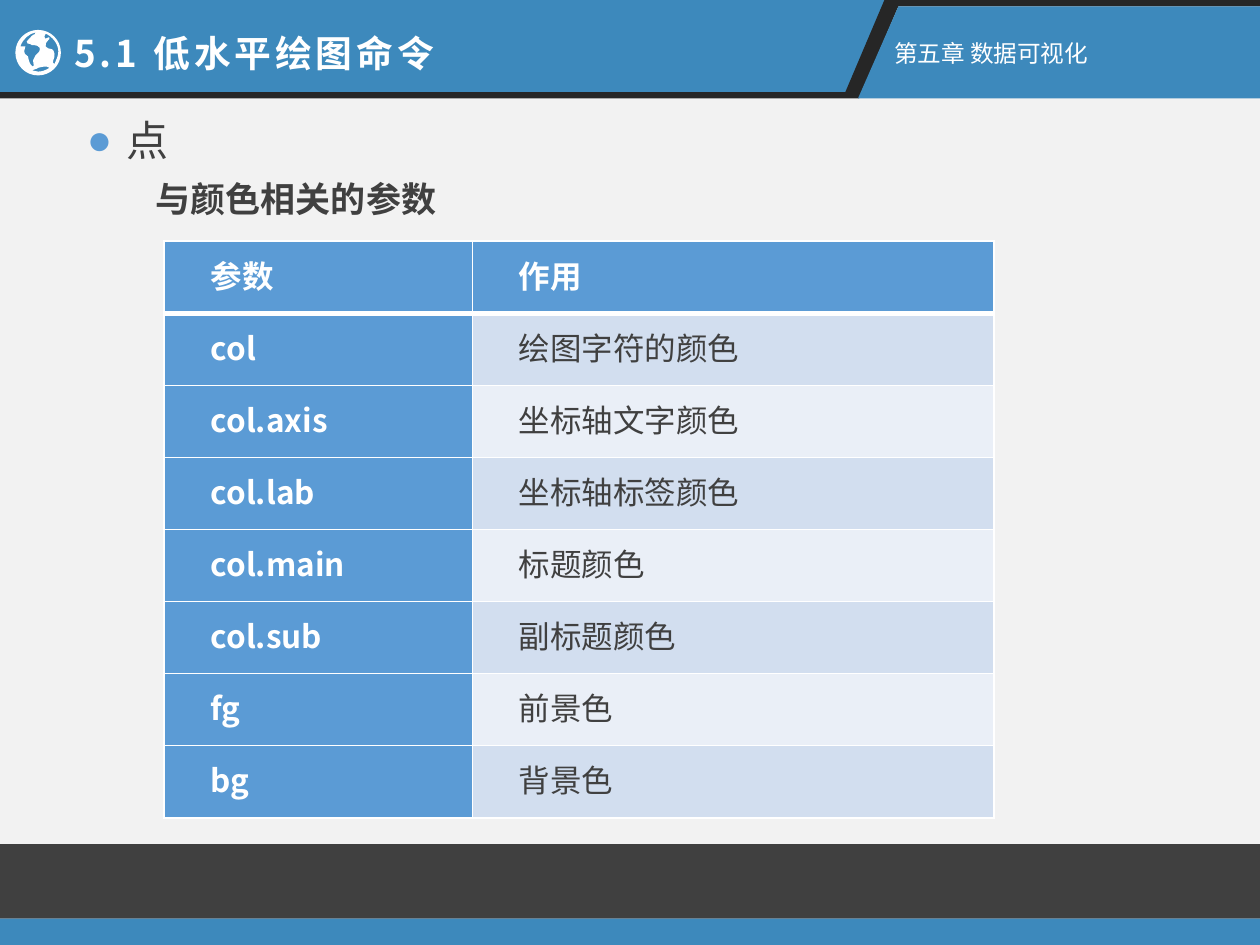
from lxml import etree
from pptx import Presentation
from pptx.dml.color import RGBColor
from pptx.enum.shapes import MSO_SHAPE
from pptx.enum.text import MSO_ANCHOR, MSO_AUTO_SIZE, PP_ALIGN
from pptx.oxml.ns import qn
from pptx.util import Pt

RECT = MSO_SHAPE.RECTANGLE
TOP, MIDDLE = MSO_ANCHOR.TOP, MSO_ANCHOR.MIDDLE
NO_FIT = MSO_AUTO_SIZE.NONE
LEFT, JUSTIFY = PP_ALIGN.LEFT, PP_ALIGN.JUSTIFY
FACE = "Noto Sans CJK SC"
WIDE, HIGH = 720, 540
COLORS = {
    "page": "F2F2F2", "dark": "404040", "black": "262626", "blue": "3D89BC",
    "head": "5B9BD5", "odd": "D2DEEF", "even": "EAEFF7", "white": "FFFFFF",
}
ROWS = [
    ("参数", "作用"),
    ("col", "绘图字符的颜色"),
    ("col.axis", "坐标轴文字颜色"),
    ("col.lab", "坐标轴标签颜色"),
    ("col.main", "标题颜色"),
    ("col.sub", "副标题颜色"),
    ("fg", "前景色"),
    ("bg", "背景色"),
]
GLOBE = [
    [(18, 0), (8, 0), (0, 8), (0, 18), (0, 28), (8, 36), (18, 36),
     (28, 36), (36, 28), (36, 18), (36, 8), (28, 0), (18, 0)],
    [(34, 17), (34, 21), (32, 24), (31, 27), (30, 27), (29, 25), (30, 24),
     (31, 23), (31, 20), (31, 19), (31, 18), (30, 15), (28, 15),
     (27, 15), (26, 15), (24, 13), (23, 9), (28, 8), (27, 6),
     (26, 5), (23, 9), (23, 5), (23, 4), (23, 4), (24, 3),
     (29, 5), (34, 11), (34, 17)],
    [(16, 2), (16, 3), (15, 4), (14, 4), (13, 5), (12, 5), (12, 6),
     (11, 7), (9, 9), (9, 9), (9, 10), (10, 12), (11, 11),
     (11, 11), (12, 11), (13, 12), (15, 12), (21, 12), (19, 17),
     (18, 19), (16, 19), (15, 22), (15, 22), (14, 24), (14, 24),
     (14, 25), (15, 29), (14, 29), (13, 29), (11, 26), (11, 25),
     (11, 24), (10, 23), (10, 21), (10, 20), (7, 20), (7, 17),
     (7, 15), (8, 14), (8, 13), (8, 13), (5, 13), (4, 13),
     (6, 7), (11, 3), (16, 2)],
    [(13, 32), (15, 32), (15, 31), (16, 31), (16, 31), (17, 31), (18, 30),
     (19, 30), (21, 29), (23, 29), (24, 29), (26, 29), (27, 30),
     (24, 32), (21, 33), (18, 33), (16, 33), (15, 32), (13, 32)],
]


def color(name):
    return RGBColor.from_string(COLORS[name])


def paint(shape, name):
    shape.shadow.inherit = False
    shape.fill.solid()
    shape.fill.fore_color.rgb = color(name)
    shape.line.fill.background()


def style(para, size, tint, bold=False, lead=1.2):
    para.line_spacing = Pt(round(size * lead, 2))
    for run in para.runs:
        font = run.font
        font.name, font.size, font.bold = FACE, Pt(size), bold
        font.color.rgb = color(tint)
        etree.SubElement(font._element, qn("a:ea"), typeface=FACE)


def block(slide, box, tint):
    paint(slide.shapes.add_shape(RECT, *map(Pt, box)), tint)


def outline(shapes, box, paths, tint):
    left, top = box[:2]
    loops = [[(Pt(left + x), Pt(top + y)) for x, y in path] for path in paths]
    pen = shapes.build_freeform(*loops[0][0])
    pen.add_line_segments(loops[0][1:], close=True)
    for loop in loops[1:]:
        pen.move_to(*loop[0])
        pen.add_line_segments(loop[1:], close=True)
    shape = pen.convert_to_shape()
    paint(shape, tint)
    return shape


def label(slide, box, text, size, tint, bold=False, wrap=True):
    frame = slide.shapes.add_textbox(*map(Pt, box)).text_frame
    frame.word_wrap = wrap
    frame.text = text
    para = frame.paragraphs[0]
    style(para, size, tint, bold)
    return para


def bend(shape):
    lines = list(shape._element.iter(qn("a:lnTo")))
    for at in range(0, len(lines), 3):
        curve = etree.Element(qn("a:cubicBezTo"))
        lines[at].addprevious(curve)
        for line in lines[at:at + 3]:
            curve.append(line[0])
            line.getparent().remove(line)


def globe(slide, box):
    unit = box[2] / 36
    paths = [[(x * unit, y * unit) for x, y in knots] for knots in GLOBE]
    bend(outline(slide.shapes, box, paths, "white"))


def heading(slide, box):
    title = slide.shapes.title
    slide.shapes.element.append(title.element)
    title.left, title.top, title.width, title.height = map(Pt, box)
    frame = title.text_frame
    frame.text = "5.1 低水平绘图命令"
    frame.word_wrap, frame.auto_size = False, NO_FIT
    frame.vertical_anchor = TOP
    para = frame.paragraphs[0]
    para.alignment = LEFT
    style(para, 21, "white", True)
    para.runs[0].font._element.set("spc", "220")


def banner(slide, box):
    left, top, wide, high = box
    rim, base = 3.6, high - 3.6
    group = slide.shapes.add_group_shape().shapes
    outline(group, box, [[(0, 0), (wide, 0), (507.6, 0), (485.3, base), (0, base)]], "blue")
    outline(group, box, [[(505.4, 0), (wide, 0), (wide, rim), (513.4, rim),
                          (491, high), (0, high), (0, base), (483.1, base)]], "black")
    outline(group, box, [[(513.4, rim), (wide, rim), (wide, high), (490.3, high)]], "blue")
    heading(slide, (left + 35.3, top + 13.7, 226.8, 32.4))
    globe(slide, (left + 8.8, top + 17.1, 26, 26))
    label(slide, (left + 504, top + 18.7, 127.4, 23.8),
          "第五章 数据可视化", 13.5, "white", wrap=False)


def footer(slide, box):
    left, top, wide, high = box
    strip = 15.1
    block(slide, (left, top, wide, high - strip), "dark")
    block(slide, (left, top + high - strip, wide, strip), "blue")


def topic(slide, box):
    left, top, wide, high = box
    props = label(slide, (left, top, wide, 36), "点", 24, "dark")._p.get_or_add_pPr()
    props.set("marL", str(Pt(22.5)))
    props.set("indent", str(Pt(-22.5)))
    tint = etree.SubElement(props, qn("a:buClr"))
    etree.SubElement(tint, qn("a:srgbClr"), val=COLORS["head"])
    etree.SubElement(props, qn("a:buFont"), typeface="Arial")
    etree.SubElement(props, qn("a:buChar"), char="●")
    label(slide, (left + 39.4, top + 36, 200.2, high - 36),
          "与颜色相关的参数", 20, "dark", True)


def border(cell, row):
    props = cell._tc.get_or_add_tcPr()
    thick = {"L": 1, "R": 1, "T": 3 if row == 1 else 1, "B": 3 if row == 0 else 1}
    for side, width in thick.items():
        line = etree.SubElement(props, qn("a:ln" + side), w=str(Pt(width)))
        fill = etree.SubElement(line, qn("a:solidFill"))
        etree.SubElement(fill, qn("a:srgbClr"), val=COLORS["white"])


def grid(slide, box):
    table = slide.shapes.add_table(len(ROWS), 2, *map(Pt, box)).table
    table.first_row = table.horz_banding = False
    for col, width in zip(table.columns, (176.2, box[2] - 176.2)):
        col.width = Pt(width)
    for row, texts in enumerate(ROWS):
        table.rows[row].height = Pt(box[3] / len(ROWS))
        for col, text in enumerate(texts):
            cell = table.cell(row, col)
            head = row == 0 or col == 0
            border(cell, row)
            cell.fill.solid()
            cell.fill.fore_color.rgb = color("head" if head else "odd" if row % 2 else "even")
            cell.margin_left = cell.margin_right = Pt(5.8)
            cell.margin_top = cell.margin_bottom = Pt(5.8)
            cell.vertical_anchor = MIDDLE
            cell.text_frame.text = text
            para = cell.text_frame.paragraphs[0]
            para.alignment = JUSTIFY
            para._p.get_or_add_pPr().set("indent", str(Pt(20.9)))
            style(para, 18, "white" if head else "dark", head, 1.27)


def main():
    deck = Presentation()
    deck.slide_width, deck.slide_height = Pt(WIDE), Pt(HIGH)
    slide = deck.slides.add_slide(deck.slide_layouts[5])
    slide.background.fill.solid()
    slide.background.fill.fore_color.rgb = color("page")
    footer(slide, (0, 482.4, WIDE, HIGH - 482.4))
    banner(slide, (0, 0, WIDE, 56.2))
    topic(slide, (42.5, 61.9, 217.4, 67.7))
    grid(slide, (93.7, 137.8, 474.3, 329.6))
    deck.save("out.pptx")


if __name__ == "__main__":
    main()
